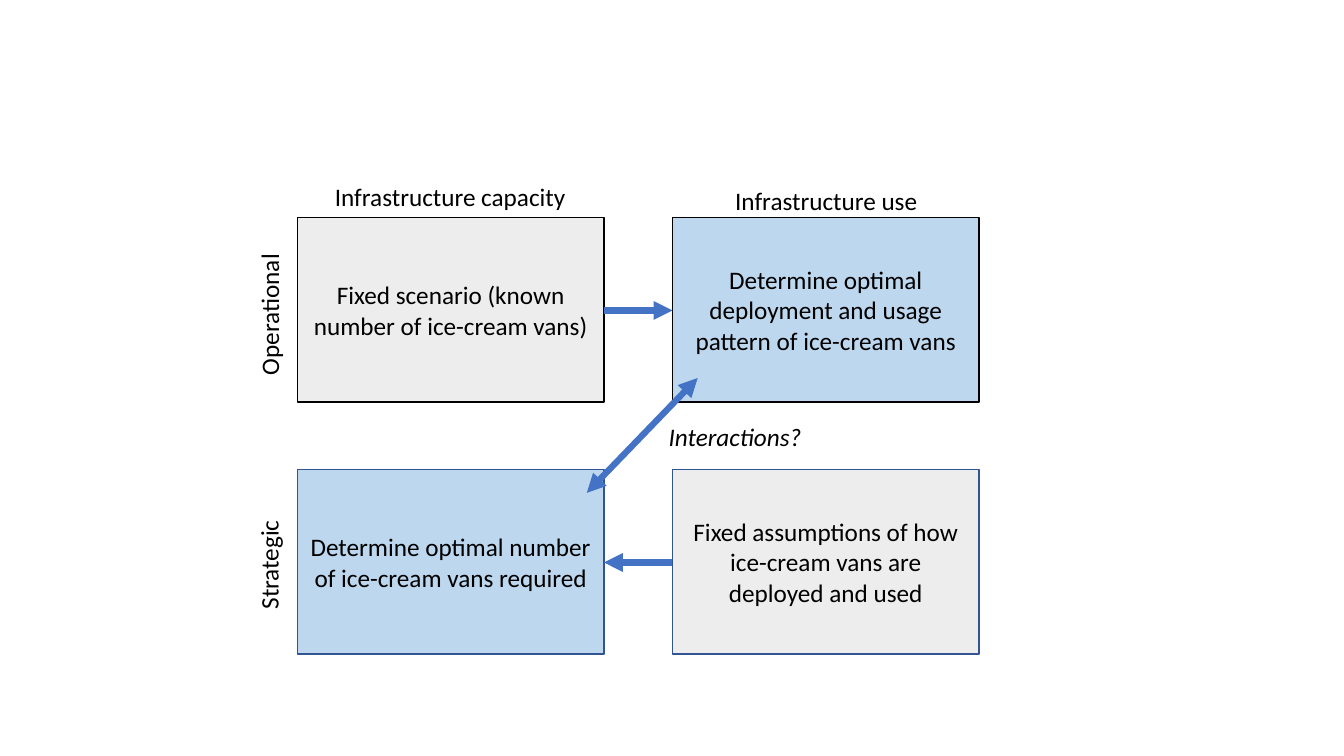
from dataclasses import dataclass

from lxml.etree import SubElement
from pptx import Presentation
from pptx.dml.color import RGBColor as Rgb
from pptx.enum.shapes import MSO_CONNECTOR as Link, MSO_SHAPE as Form
from pptx.enum.text import MSO_ANCHOR as Anchor, MSO_AUTO_SIZE as Fit, PP_ALIGN as Align
from pptx.oxml.ns import qn
from pptx.util import Pt

SCALE = 9144  # EMU in one px, at 100 px to the inch


def px(n):
    return n * SCALE


@dataclass(frozen=True)
class Theme:
    face: str = "Calibri"
    size: int = 18
    ink: str = "000000"
    edge: str = "325491"
    arrow: str = "4472C4"
    fixed: str = "EDEDED"
    solve: str = "BDD7EE"
    thin: float = 1
    thick: float = 4.5


class Board:
    def __init__(self, slide, theme):
        self.slide, self.theme = slide, theme

    def words(self, frame, text, align, **extra):
        para = frame.paragraphs[0]
        para.alignment = align
        run = para.add_run()
        run.text = text
        look = {"name": self.theme.face, "size": Pt(self.theme.size), **extra}
        for key, value in look.items():
            setattr(run.font, key, value)
        run.font.color.rgb = Rgb.from_string(self.theme.ink)

    def stroke(self, line, color, width):
        line.color.rgb = Rgb.from_string(color)
        line.width = Pt(width)

    def box(self, x, y, w, h, text, fill, edge):
        shape = self.slide.shapes.add_shape(Form.RECTANGLE, px(x), px(y), px(w), px(h))
        shape.shadow.inherit = False
        shape.fill.solid()
        shape.fill.fore_color.rgb = Rgb.from_string(fill)
        self.stroke(shape.line, edge, self.theme.thin)
        frame = shape.text_frame
        frame.word_wrap = True
        frame.vertical_anchor = Anchor.MIDDLE
        self.words(frame, text, Align.CENTER)

    def label(self, x, y, w, text, align=Align.CENTER, turn=0, **extra):
        shape = self.slide.shapes.add_textbox(px(x), px(y), px(w), px(40))
        shape.rotation = turn
        frame = shape.text_frame
        frame.word_wrap = False
        frame.auto_size = Fit.SHAPE_TO_FIT_TEXT
        self.words(frame, text, align, **extra)

    def arrow(self, start, end, *tips):
        points = [px(n) for n in (*start, *end)]
        link = self.slide.shapes.add_connector(Link.STRAIGHT, *points)
        self.stroke(link.line, self.theme.arrow, self.theme.thick)
        props = link._element.spPr
        for tip in tips:
            SubElement(props.find(qn("a:ln")), qn(f"a:{tip}End"), type="triangle")
        SubElement(props, qn("a:effectLst"))


def main():
    deck = Presentation()
    deck.slide_width, deck.slide_height = px(1333), px(750)
    theme = Theme()
    board = Board(deck.slides.add_slide(deck.slide_layouts[6]), theme)

    # Two by two grid of boxes
    left, right = 295, 667
    top, low = 216, 466
    wide, high = 304, 183
    boxes = [
        (right, top, "Determine optimal deployment and usage pattern of ice-cream vans",
         theme.solve, theme.ink),
        (right, low, "Fixed assumptions of how ice-cream vans are deployed and used",
         theme.fixed, theme.edge),
        (left, top, "Fixed scenario (known number of ice-cream vans)",
         theme.fixed, theme.ink),
        (left, low, "Determine optimal number of ice-cream vans required",
         theme.solve, theme.edge),
    ]
    for x, y, *rest in boxes:
        board.box(x, y, wide, high, *rest)

    # Arrows across each row
    for y, tip in ((top, "tail"), (low, "head")):
        mid = y + high // 2 + 1
        board.arrow((left + wide, mid), (right, mid), tip)

    # Row and column labels
    board.label(212, 540, 109, "Strategic", Align.LEFT, 270)
    board.label(196, 291, 142, "Operational", Align.LEFT, 270)
    board.label(321, 175, 251, "Infrastructure capacity")
    board.label(718, 179, 203, "Infrastructure use")

    # Link between the two decisions
    board.label(652, 413, 154, "Interactions?", italic=True)
    board.arrow((582, 489), (692, 375), "head", "tail")

    deck.save("out.pptx")


if __name__ == "__main__":
    main()
